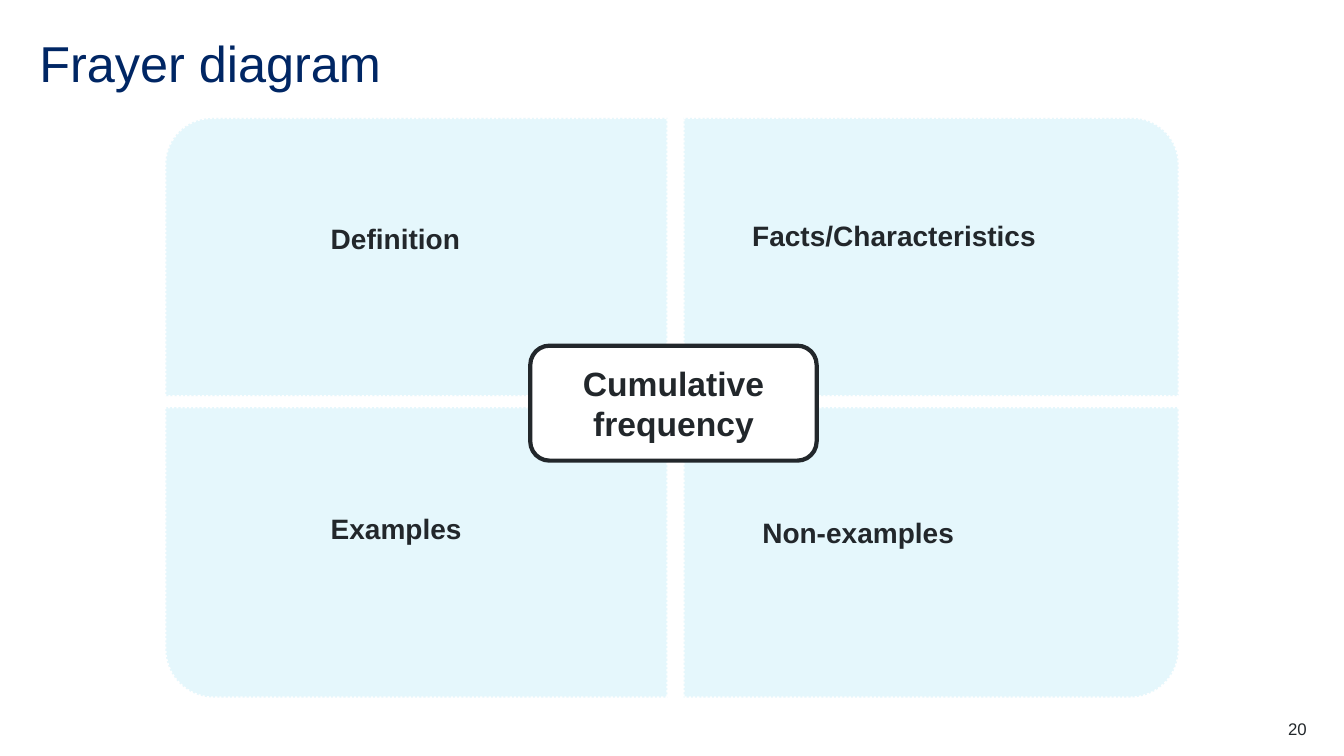
from pptx import Presentation
from pptx.dml.color import RGBColor
from pptx.enum.dml import MSO_LINE
from pptx.enum.shapes import MSO_SHAPE
from pptx.enum.text import MSO_ANCHOR, PP_ALIGN
from pptx.util import Inches, Pt

INK, NAVY, PALE, WHITE = "22272B", "002664", "E5F7FC", "FFFFFF"

prs = Presentation()
prs.slide_width, prs.slide_height = Inches(13.33), Inches(7.5)
s = prs.slides.add_slide(prs.slide_layouts[6])


def paint(fmt, color):
    fmt.fill.solid()
    fmt.fill.fore_color.rgb = RGBColor.from_string(color)


def write(sp, text, size, color=INK, bold=False, align=PP_ALIGN.LEFT,
          anchor=MSO_ANCHOR.TOP, insets=(0, 0, 0, 0), spacing=1.0):
    tf = sp.text_frame
    tf.text = text
    tf.word_wrap = True
    tf.vertical_anchor = anchor
    (tf.margin_left, tf.margin_top,
     tf.margin_right, tf.margin_bottom) = map(Inches, insets)
    p = tf.paragraphs[0]
    p.alignment = align
    p.line_spacing = spacing
    font = p.runs[0].font
    font.name, font.size, font.bold = "Arial", Pt(size), bold
    paint(font, color)


title = s.shapes.add_textbox(Inches(0.39), Inches(0.39), Inches(12.56), Inches(0.6))
write(title, "Frayer diagram", 36, NAVY, spacing=0.9)

columns = [(1.64, 4.98), (6.78, 4.91)]
rows = [(1.17, 2.76), (4.04, 2.88)]
rotations = [[270, 0], [180, 90]]
for r, (top, height) in enumerate(rows):
    for c, (left, width) in enumerate(columns):
        turn = rotations[r][c]
        w, h = (height, width) if turn % 180 else (width, height)
        x, y = left + (width - w) / 2, top + (height - h) / 2
        sp = s.shapes.add_shape(MSO_SHAPE.ROUND_1_RECTANGLE,
                                Inches(x), Inches(y), Inches(w), Inches(h))
        sp.rotation = turn
        sp.shadow.inherit = False
        paint(sp, PALE)
        paint(sp.line, WHITE)
        sp.line.width = Pt(1.5)
        sp.line.dash_style = MSO_LINE.ROUND_DOT

topic = s.shapes.add_shape(MSO_SHAPE.ROUNDED_RECTANGLE,
                           Inches(5.26), Inches(3.43), Inches(2.84), Inches(1.14))
topic.shadow.inherit = False
paint(topic, WHITE)
paint(topic.line, INK)
topic.line.width = Pt(3)
write(topic, "Cumulative frequency", 24, bold=True, align=PP_ALIGN.CENTER,
      anchor=MSO_ANCHOR.MIDDLE, insets=(0.11, 0.11, 0.11, 0.11))

labels = [
    ("Definition", 2.59, 1.97, 2.28, 0.79, 0.69, 0.39, 0.9),
    ("Facts/Characteristics", 6.94, 1.94, 3.61, 0.82, 0.52, 0.39, 0.9),
    ("Examples", 2.59, 4.6, 2.36, 1.19, 0.69, 0.79, 1.0),
    ("Non-examples", 7.04, 4.69, 3.42, 1.09, 0.52, 0.79, 0.9),
]
for text, left, top, width, height, indent, drop, spacing in labels:
    sp = s.shapes.add_textbox(Inches(left), Inches(top), Inches(width), Inches(height))
    write(sp, text, 20, bold=True, insets=(indent, drop, 0.17, 0.17), spacing=spacing)

number = s.shapes.add_textbox(Inches(12.17), Inches(7.13), Inches(0.79), Inches(0.2))
write(number, "20", 12, align=PP_ALIGN.RIGHT)

prs.save("out.pptx")
